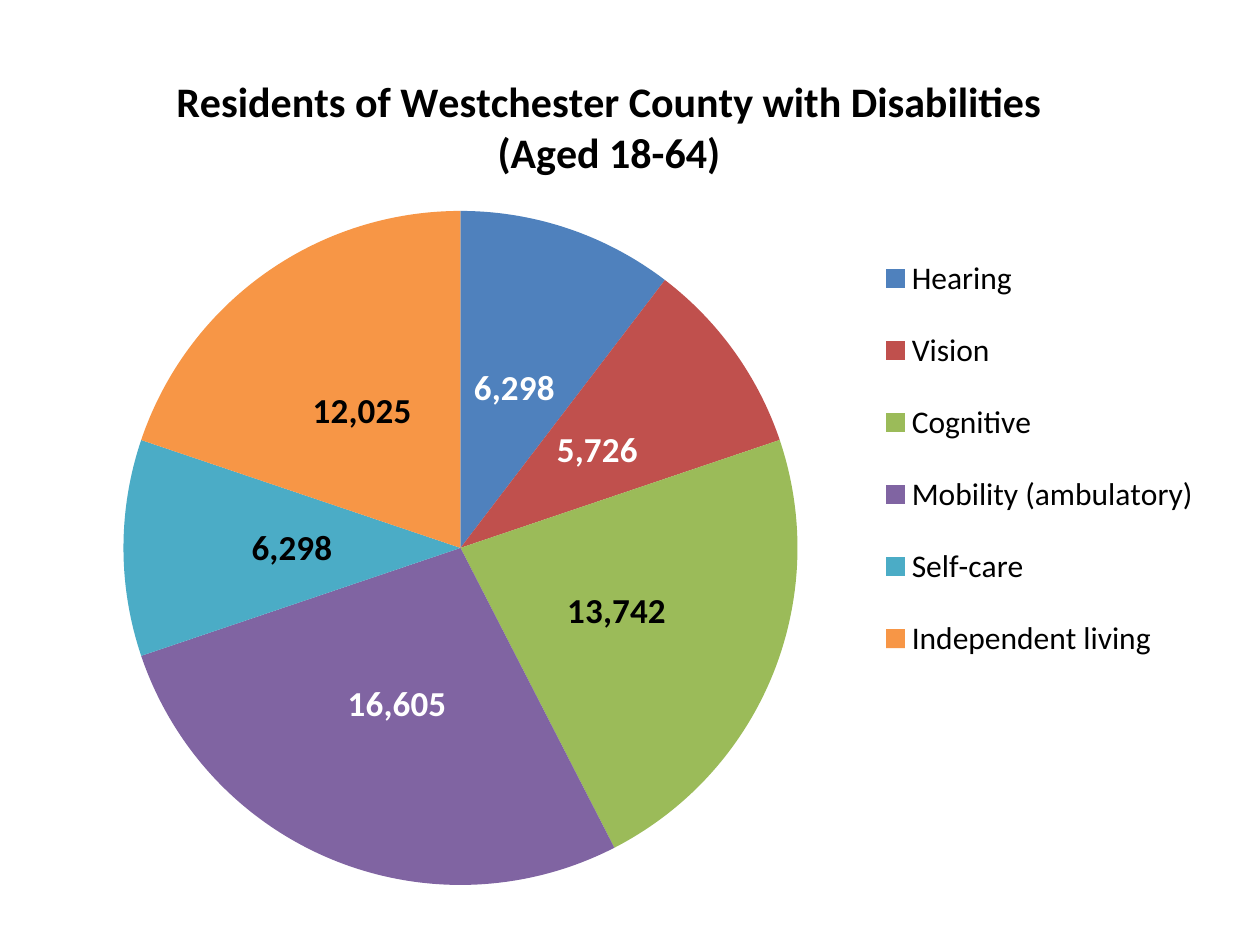
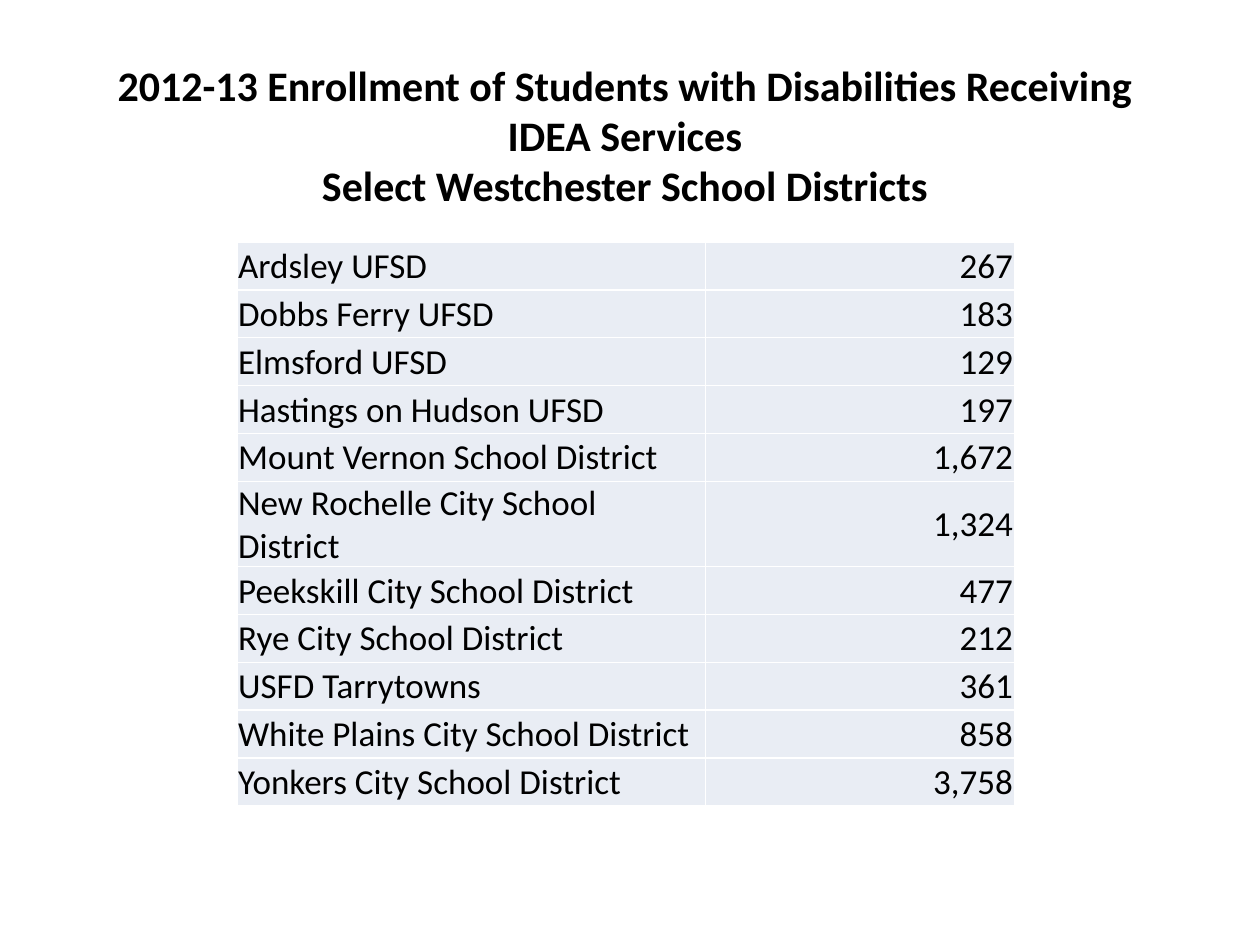
from dataclasses import dataclass
from typing import Any

from lxml.etree import SubElement
from pptx import Presentation
from pptx.chart.data import CategoryChartData
from pptx.dml.color import RGBColor
from pptx.enum.chart import XL_CHART_TYPE as ChartType
from pptx.enum.chart import XL_LABEL_POSITION as LabelPos
from pptx.enum.chart import XL_LEGEND_POSITION as LegendPos
from pptx.enum.text import MSO_ANCHOR as Anchor
from pptx.enum.text import MSO_AUTO_SIZE as AutoSize
from pptx.enum.text import PP_ALIGN as Align
from pptx.oxml import parse_xml
from pptx.oxml.ns import nsdecls, qn
from pptx.util import Pt

PX = 9144  # EMU per px, 100 px to the inch

COLORS = {
    "text": "000000",
    "light": "FFFFFF",
    "row": "E9EDF4",
    "hearing": "4F81BD",
    "vision": "C0504D",
    "cognitive": "9BBB59",
    "mobility": "8064A2",
    "self_care": "4BACC6",
    "independent": "F79646",
}
FONT = "Calibri"
TITLE = {"name": FONT, "size": Pt(24), "bold": True}
BODY = {"name": FONT, "size": Pt(20), "bold": False}
LABEL = {"name": FONT, "size": Pt(20), "bold": True}
LEGEND = {"name": FONT, "size": Pt(18), "bold": False}
NUMBER_FORMAT = "#,##0"


@dataclass(frozen=True)
class Box:
    left: int
    top: int
    width: int
    height: int

    def emu(self) -> tuple[int, ...]:
        return tuple(n * PX for n in (self.left, self.top, self.width, self.height))


@dataclass(frozen=True)
class Disability:
    name: str
    residents: int
    color: str
    label_color: str = "text"


@dataclass(frozen=True)
class District:
    name: str
    students: int


DISABILITIES = [
    Disability("Hearing", 6298, "hearing", "light"),
    Disability("Vision", 5726, "vision", "light"),
    Disability("Cognitive", 13742, "cognitive"),
    Disability("Mobility (ambulatory)", 16605, "mobility", "light"),
    Disability("Self-care", 6298, "self_care"),
    Disability("Independent living", 12025, "independent"),
]
DISTRICTS = [
    District("Ardsley UFSD", 267),
    District("Dobbs Ferry UFSD", 183),
    District("Elmsford UFSD", 129),
    District("Hastings on Hudson UFSD", 197),
    District("Mount Vernon School District", 1672),
    District("New Rochelle City School District", 1324),
    District("Peekskill City School District", 477),
    District("Rye City School District", 212),
    District("USFD Tarrytowns", 361),
    District("White Plains City School District", 858),
    District("Yonkers City School District", 3758),
]

CHART = Box(33, 33, 933, 683)
CHART_TITLE = Box(137, 57, 690, 82)
PIE = Box(98, 167, 535, 536)
CHART_LEGEND = Box(690, 179, 270, 370)
ENROLLMENT_TITLE = Box(75, 42, 842, 131)
ROW_HEIGHT = 38
COLUMN_WIDTHS = (372, 245)
ENROLLMENT = Box(188, 192, sum(COLUMN_WIDTHS), ROW_HEIGHT * len(DISTRICTS))


def rgb(color: str) -> RGBColor:
    return RGBColor.from_string(COLORS[color])


def apply(target: Any, values: dict[str, Any]) -> None:
    for name, value in values.items():
        setattr(target, name, value)


def style(font: Any, values: dict[str, Any], color: str = "text") -> None:
    apply(font, values)
    font.color.rgb = rgb(color)


def write_title(frame: Any, lines: list[str]) -> None:
    """Write centred title lines, one paragraph each."""
    for number, line in enumerate(lines):
        paragraph = frame.add_paragraph() if number else frame.paragraphs[0]
        paragraph.alignment = Align.CENTER
        run = paragraph.add_run()
        run.text = line
        style(run.font, TITLE)


def place(part: Any, box: Box, index: int, sized: bool = True) -> None:
    """Give a chart part a manual layout, as its child at the given index."""
    for old in part.findall(qn("c:layout")):
        part.remove(old)
    layout = parse_xml(f"<c:layout {nsdecls('c')}><c:manualLayout/></c:layout>")
    values: dict[str, Any] = {"xMode": "edge", "yMode": "edge"}
    if part.tag == qn("c:plotArea"):
        values = {"layoutTarget": "inner", **values}
    values["x"] = (box.left - CHART.left) / CHART.width
    values["y"] = (box.top - CHART.top) / CHART.height
    if sized:
        values["w"] = box.width / CHART.width
        values["h"] = box.height / CHART.height
    for name, value in values.items():
        SubElement(layout[0], qn(f"c:{name}")).set("val", str(value))
    part.insert(index, layout)


def add_disability_chart(slide: Any) -> None:
    data = CategoryChartData(number_format=NUMBER_FORMAT)
    data.categories = [d.name for d in DISABILITIES]
    data.add_series("Series 1", [d.residents for d in DISABILITIES])
    chart = slide.shapes.add_chart(ChartType.PIE, *CHART.emu(), data).chart
    style(chart.font, {"name": FONT, "size": Pt(10)})

    chart.has_title = True
    write_title(
        chart.chart_title.text_frame,
        ["Residents of Westchester County with Disabilities", "(Aged 18-64)"],
    )
    chart.has_legend = True
    apply(chart.legend, {"position": LegendPos.RIGHT, "include_in_layout": False})
    style(chart.legend.font, LEGEND)

    plot = chart.plots[0]
    apply(plot, {"vary_by_categories": True, "has_data_labels": True})
    series = plot.series[0]
    label_format = {
        "show_value": True,
        "position": LabelPos.CENTER,
        "number_format": NUMBER_FORMAT,
        "number_format_is_linked": False,
    }
    for labels in (plot.data_labels, series.data_labels):
        apply(labels, label_format)
        style(labels.font, LABEL)
    for number, disability in enumerate(DISABILITIES):
        point = series.points[number]
        point.format.fill.solid()
        point.format.fill.fore_color.rgb = rgb(disability.color)
        if disability.label_color != "text":
            style(point.data_label.font, LABEL, disability.label_color)
            point.data_label.position = LabelPos.CENTER

    place(chart.element.xpath("c:chart/c:title")[0], CHART_TITLE, 1, sized=False)
    place(chart.element.xpath("c:chart/c:plotArea")[0], PIE, 0)
    place(chart.element.xpath("c:chart/c:legend")[0], CHART_LEGEND, 1)


def add_borders(cell: Any) -> None:
    properties = cell._tc.get_or_add_tcPr()
    for index, side in enumerate("LRTB"):
        border = parse_xml(
            f'<a:ln{side} {nsdecls("a")} w="{Pt(1)}"><a:solidFill>'
            f'<a:srgbClr val="{COLORS["light"]}"/></a:solidFill></a:ln{side}>'
        )
        properties.insert(index, border)


def fill_cell(cell: Any, text: str, align: Any) -> None:
    apply(cell, {
        "vertical_anchor": Anchor.MIDDLE,
        "margin_left": PX,
        "margin_right": PX,
        "margin_top": PX,
        "margin_bottom": 0,
    })
    cell.fill.solid()
    cell.fill.fore_color.rgb = rgb("row")
    add_borders(cell)
    paragraph = cell.text_frame.paragraphs[0]
    paragraph.alignment = align
    run = paragraph.add_run()
    run.text = text
    style(run.font, BODY)


def add_enrollment_title(slide: Any) -> None:
    frame = slide.shapes.add_textbox(*ENROLLMENT_TITLE.emu()).text_frame
    apply(frame, {"word_wrap": True, "auto_size": AutoSize.SHAPE_TO_FIT_TEXT})
    write_title(frame, [
        "2012-13 Enrollment of Students with Disabilities Receiving IDEA Services",
        "Select Westchester School Districts",
    ])


def add_enrollment_table(slide: Any) -> None:
    table = slide.shapes.add_table(
        len(DISTRICTS), len(COLUMN_WIDTHS), *ENROLLMENT.emu()
    ).table
    apply(table, {"first_row": False, "horz_banding": False})
    for column, width in zip(table.columns, COLUMN_WIDTHS):
        column.width = width * PX
    for row, district in zip(table.rows, DISTRICTS):
        row.height = ROW_HEIGHT * PX
        fill_cell(row.cells[0], district.name, Align.LEFT)
        fill_cell(row.cells[1], f"{district.students:,}", Align.RIGHT)


def main() -> None:
    deck = Presentation()
    apply(deck, {"slide_width": 1000 * PX, "slide_height": 750 * PX})
    blank = deck.slide_layouts[6]
    add_disability_chart(deck.slides.add_slide(blank))
    enrollment_slide = deck.slides.add_slide(blank)
    add_enrollment_title(enrollment_slide)
    add_enrollment_table(enrollment_slide)
    deck.save("out.pptx")


if __name__ == "__main__":
    main()
